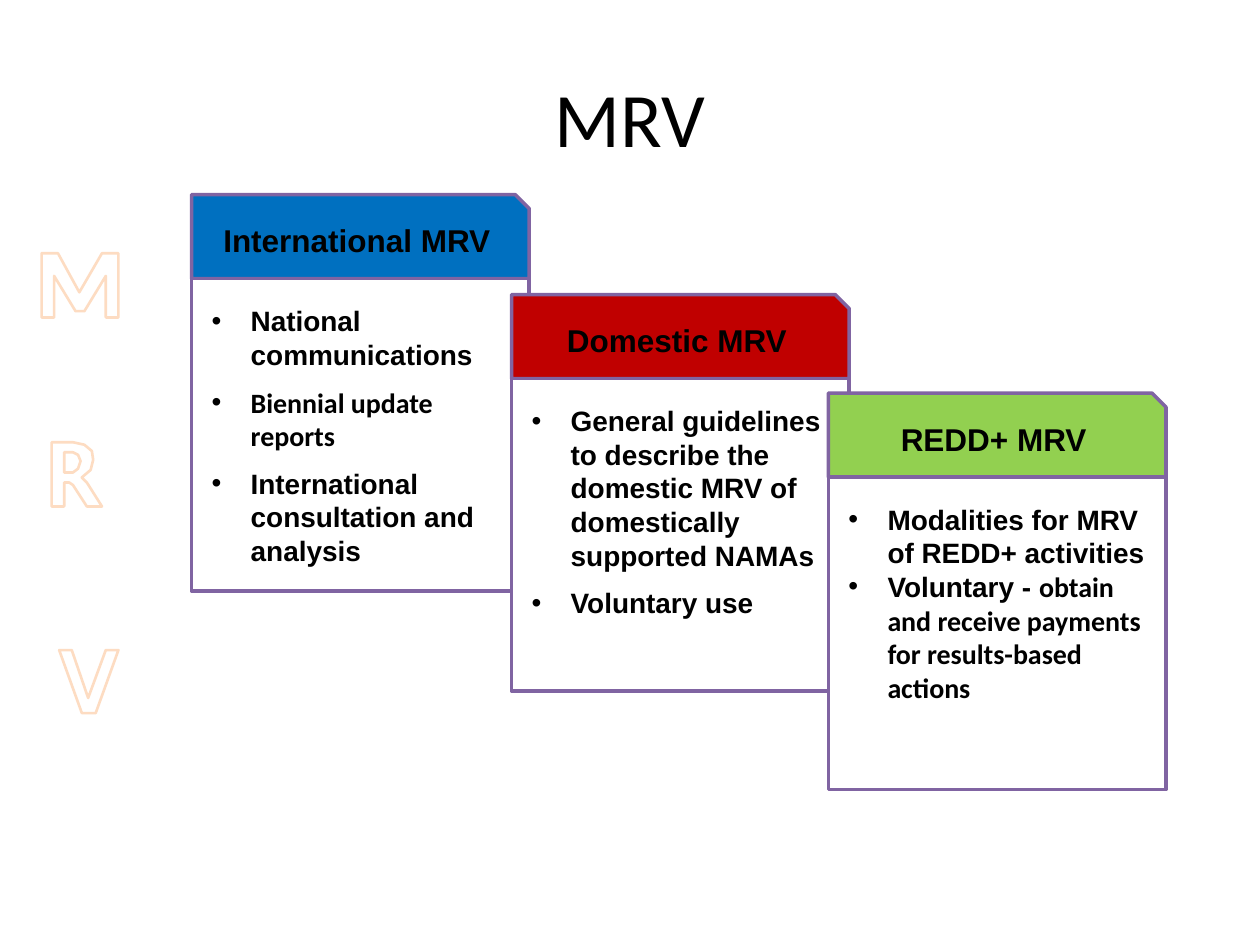
import dataclasses

import lxml.etree
import pptx
import pptx.dml.color
import pptx.enum.shapes
import pptx.enum.text
import pptx.oxml.ns
import pptx.util

Inches = pptx.util.Inches
Pt = pptx.util.Pt
Shape = pptx.enum.shapes.MSO_SHAPE
Align = pptx.enum.text.PP_ALIGN
Anchor = pptx.enum.text.MSO_ANCHOR


@dataclasses.dataclass(frozen=True)
class Theme:
    ink: str = "000000"
    paper: str = "FFFFFF"
    border: str = "8064A2"
    glow: str = "FDDCC2"
    blue: str = "0070C0"
    red: str = "C00000"
    green: str = "92D050"
    heading_font: str = "Arial"
    text_font: str = "Calibri"
    title_size: int = 44
    header_size: int = 18
    body_size: int = 16


LETTERS = {
    "M": [[(0, 51), (0, 0), (13, 0), (30, 31), (48, 0), (61, 0), (61, 51),
           (51, 51), (51, 18), (34, 46), (27, 46), (10, 18), (10, 51)]],
    "R": [[(0, 0), (17, 0), (26, 2), (32, 7), (33, 14), (31, 22), (24, 28), (28, 32),
           (40, 51), (28, 51), (17, 34), (14, 32), (10, 32), (10, 51), (0, 51)],
          [(10, 8), (17, 8), (21, 10), (23, 15), (21, 21), (17, 24), (10, 24)]],
    "V": [[(0, 0), (10, 0), (23, 38), (37, 0), (47, 0), (29, 50), (18, 50)]],
}


def rgb(value):
    return pptx.dml.color.RGBColor.from_string(value)


def add_xml(parent, tag, **attributes):
    return lxml.etree.SubElement(parent, pptx.oxml.ns.qn(tag), attributes)


class SlideBuilder:
    columns, rows = 100, 75
    unit = Inches(0.1)

    def __init__(self, theme):
        self.theme = theme
        self.deck = pptx.Presentation()
        self.deck.slide_width = self.columns * self.unit
        self.deck.slide_height = self.rows * self.unit
        self.page = self.deck.slides.add_slide(self.deck.slide_layouts[6])

    def area(self, *cells):
        return [round(cell * self.unit) for cell in cells]

    def style(self, span, size, font, bold=True):
        span.font.size = Pt(size)
        span.font.name = font
        span.font.bold = bold
        span.font.color.rgb = rgb(self.theme.ink)

    def outline(self, box, color, width):
        box.shadow.inherit = False
        box.line.color.rgb = rgb(color)
        box.line.width = Pt(width)

    def title(self, text, *place):
        box = self.page.shapes.add_textbox(*self.area(*place))
        box.text_frame.word_wrap = True
        box.text_frame.vertical_anchor = Anchor.MIDDLE
        box.text_frame.text = text
        para = box.text_frame.paragraphs[0]
        para.alignment = Align.CENTER
        self.style(para.runs[0], self.theme.title_size, self.theme.text_font, False)

    def outlined_letter(self, letter, left, top):
        contours = LETTERS[letter]
        builder = self.page.shapes.build_freeform(*contours[0][0], scale=self.unit / 10)
        for index, points in enumerate(contours):
            if index:
                builder.move_to(*points[0])
            builder.add_line_segments(points[1:], close=True)
        box = builder.convert_to_shape(*self.area(left, top))
        box.fill.background()
        self.outline(box, self.theme.glow, 1.5)

    def panel(self, group, kind, place, fill, margins, anchor):
        box = group.shapes.add_shape(kind, *self.area(*place))
        box.fill.solid()
        box.fill.fore_color.rgb = rgb(fill)
        self.outline(box, self.theme.border, 2)
        frame = box.text_frame
        frame.word_wrap = True
        frame.vertical_anchor = anchor
        side, top = margins
        frame.margin_left = frame.margin_right = Inches(side)
        frame.margin_top, frame.margin_bottom = Inches(top), 0
        return frame

    def bullet(self, para, spans, gap):
        para.alignment = Align.LEFT
        para.space_before = Pt(gap)
        indent = Inches(0.31)
        properties = para._p.get_or_add_pPr()
        properties.set("marL", str(indent))
        properties.set("indent", str(-indent))
        add_xml(properties, "a:buFont", typeface=self.theme.heading_font)
        add_xml(properties, "a:buChar", char="•")
        for text, font in spans:
            span = para.add_run()
            span.text = text
            self.style(span, self.theme.body_size, font)

    def card(self, left, top, heading, color, items, gap):
        width, header_height, body_height = 26.8, 6.67, 24.8
        group = self.page.shapes.add_group_shape()
        header = self.panel(group, Shape.SNIP_1_RECTANGLE, (left, top, width, header_height),
                            color, (0, 0), Anchor.MIDDLE)
        header.text = heading
        para = header.paragraphs[0]
        para.alignment = Align.CENTER
        para.space_before = Pt(self.theme.header_size / 2)
        self.style(para.runs[0], self.theme.header_size, self.theme.heading_font)
        body = self.panel(group, Shape.RECTANGLE, (left, top + header_height, width, body_height),
                          self.theme.paper, (0.16, 0.2), Anchor.TOP)
        for index, spans in enumerate(items):
            para = body.add_paragraph() if index else body.paragraphs[0]
            self.bullet(para, spans, gap)


def main():
    theme = Theme()
    slide = SlideBuilder(theme)
    arial, calibri = theme.heading_font, theme.text_font
    slide.title("MRV", 5, 3, 90, 12.5)

    half_line = theme.body_size / 2
    slide.card(15.2, 15.45, "International MRV", theme.blue, [
        [("National communications", arial)],
        [("Biennial update reports", calibri)],
        [("International consultation and analysis", arial)],
    ], half_line)
    slide.card(40.6, 23.38, "Domestic MRV", theme.red, [
        [("General guidelines to describe the domestic MRV of "
          "domestically supported NAMAs", arial)],
        [("Voluntary use", arial)],
    ], half_line)
    slide.card(65.74, 31.2, "REDD+ MRV", theme.green, [
        [("Modalities for MRV of REDD+ activities", arial)],
        [("Voluntary - ", arial),
         ("obtain and receive payments for results-based actions", calibri)],
    ], 0)

    for letter, left, top in (("M", 3.3, 20.1), ("R", 4.1, 35.1), ("V", 4.7, 51.6)):
        slide.outlined_letter(letter, left, top)

    slide.deck.save("out.pptx")


if __name__ == "__main__":
    main()
